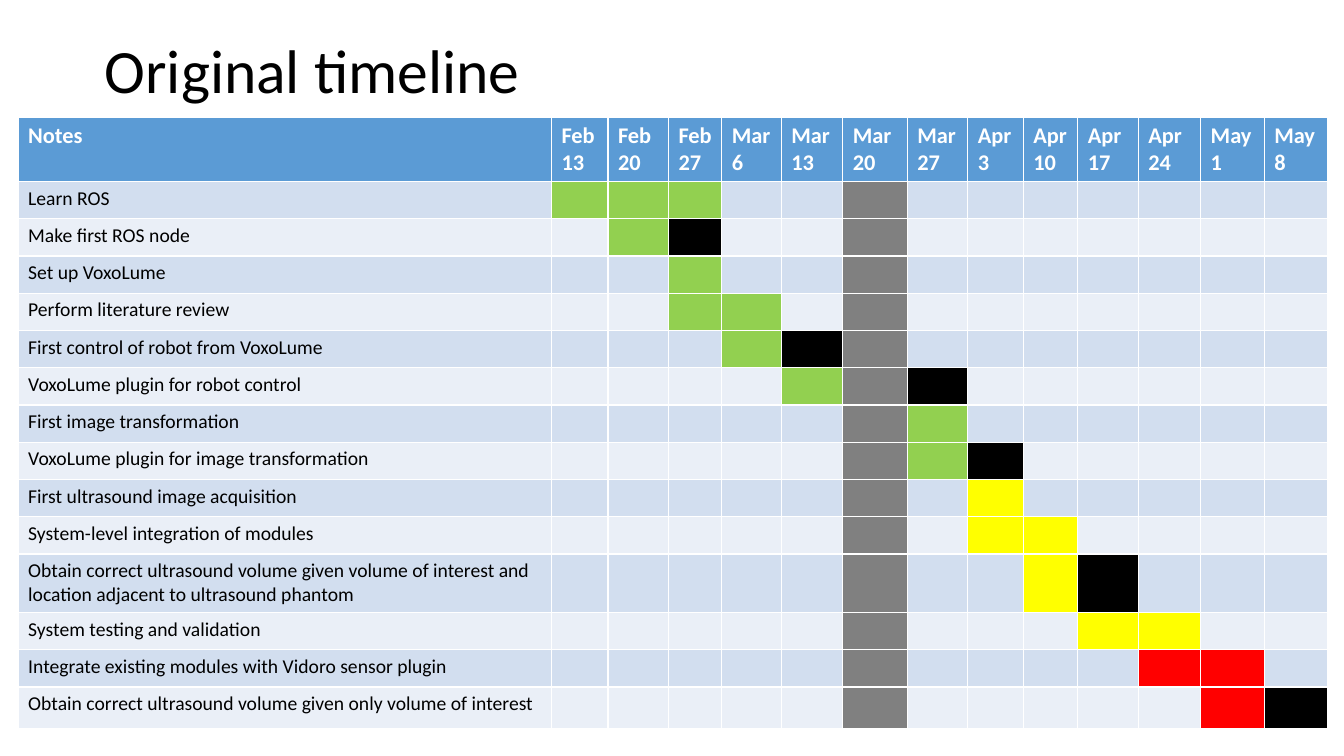
from lxml import etree
from pptx import Presentation
from pptx.dml.color import RGBColor
from pptx.enum.text import MSO_ANCHOR
from pptx.oxml.ns import qn
from pptx.util import Inches, Pt

FONT = "Calibri"
HEADER_FILL = "5B9BD5"
BAND_FILLS = ["D2DEEF", "EAEFF7"]
# G green, K black, A gray, Y yellow, R red
WEEK_FILLS = {"G": "92D050", "K": "000000", "A": "808080", "Y": "FFFF00", "R": "FF0000"}

WEEKS = ["Feb 13", "Feb 20", "Feb 27", "Mar 6", "Mar 13", "Mar 20", "Mar 27",
         "Apr 3", "Apr 10", "Apr 17", "Apr 24", "May 1", "May 8"]
COLUMN_WIDTHS = [5.29, 0.56, 0.6, 0.53, 0.59, 0.61, 0.64, 0.6,
                 0.55, 0.54, 0.6, 0.62, 0.63, 0.63]
HEADER_HEIGHT, TASK_HEIGHT = 0.64, 0.37
TALL_ROWS = {11: 0.58, 14: 0.41}

# One letter per week; a dot leaves the band colour
TASKS = [
    ("Learn ROS", "GGG..A......."),
    ("Make first ROS node", ".GK..A......."),
    ("Set up VoxoLume", "..G..A......."),
    ("Perform literature review", "..GG.A......."),
    ("First control of robot from VoxoLume", "...GKA......."),
    ("VoxoLume plugin for robot control", "....GAK......"),
    ("First image transformation", ".....AG......"),
    ("VoxoLume plugin for image transformation", ".....AGK....."),
    ("First ultrasound image acquisition", ".....A.Y....."),
    ("System-level integration of modules", ".....A.YY...."),
    ("Obtain correct ultrasound volume given volume of interest and "
     "location adjacent to ultrasound phantom", ".....A..YK..."),
    ("System testing and validation", ".....A...YY.."),
    ("Integrate existing modules with Vidoro sensor plugin", ".....A....RR."),
    ("Obtain correct ultrasound volume given only volume of interest", ".....A.....RK"),
]


def rgb(value):
    return RGBColor.from_string(value)


def add_run(p, text, size, color, bold=False):
    r = p.add_run()
    r.text = text
    r.font.name = FONT
    r.font.size = Pt(size)
    r.font.bold = bold
    r.font.color.rgb = rgb(color)


def add_title(slide, text):
    tf = slide.shapes.add_textbox(Inches(0.94), Inches(0), Inches(11.5), Inches(1.45)).text_frame
    tf.word_wrap = True
    tf.vertical_anchor = MSO_ANCHOR.MIDDLE
    p = tf.paragraphs[0]
    p.line_spacing = 0.9
    add_run(p, text, 44, "000000")


def fill_cell(cell, color):
    cell.fill.solid()
    cell.fill.fore_color.rgb = rgb(color)


def write_cell(cell, text, size, color, bold=False):
    add_run(cell.text_frame.paragraphs[0], text, size, color, bold)


def shrink_empty_cell(cell):
    """Keep the default 18 pt of an empty paragraph from stretching its row."""
    p = cell.text_frame.paragraphs[0]._p
    etree.SubElement(p, qn("a:endParaRPr"), sz="1400")


def add_timeline(slide):
    heights = [HEADER_HEIGHT] + [TALL_ROWS.get(i, TASK_HEIGHT) for i in range(1, len(TASKS) + 1)]
    table = slide.shapes.add_table(
        len(heights), len(COLUMN_WIDTHS), Inches(0.18), Inches(1.16),
        Inches(sum(COLUMN_WIDTHS)), Inches(sum(heights))).table
    for column, width in zip(table.columns, COLUMN_WIDTHS):
        column.width = Inches(width)
    for row, height in zip(table.rows, heights):
        row.height = Inches(height)

    for col, heading in enumerate(["Notes"] + WEEKS):
        cell = table.cell(0, col)
        fill_cell(cell, HEADER_FILL)
        write_cell(cell, heading, 16, "FFFFFF", bold=True)

    for row, (task, weeks) in enumerate(TASKS, start=1):
        band = BAND_FILLS[(row - 1) % 2]
        fill_cell(table.cell(row, 0), band)
        write_cell(table.cell(row, 0), task, 14, "000000")
        for col, letter in enumerate(weeks, start=1):
            cell = table.cell(row, col)
            fill_cell(cell, WEEK_FILLS.get(letter, band))
            shrink_empty_cell(cell)


def main():
    prs = Presentation()
    prs.slide_width, prs.slide_height = Inches(13.33), Inches(7.5)
    slide = prs.slides.add_slide(prs.slide_layouts[6])
    add_title(slide, "Original timeline")
    add_timeline(slide)
    prs.save("out.pptx")


if __name__ == "__main__":
    main()
